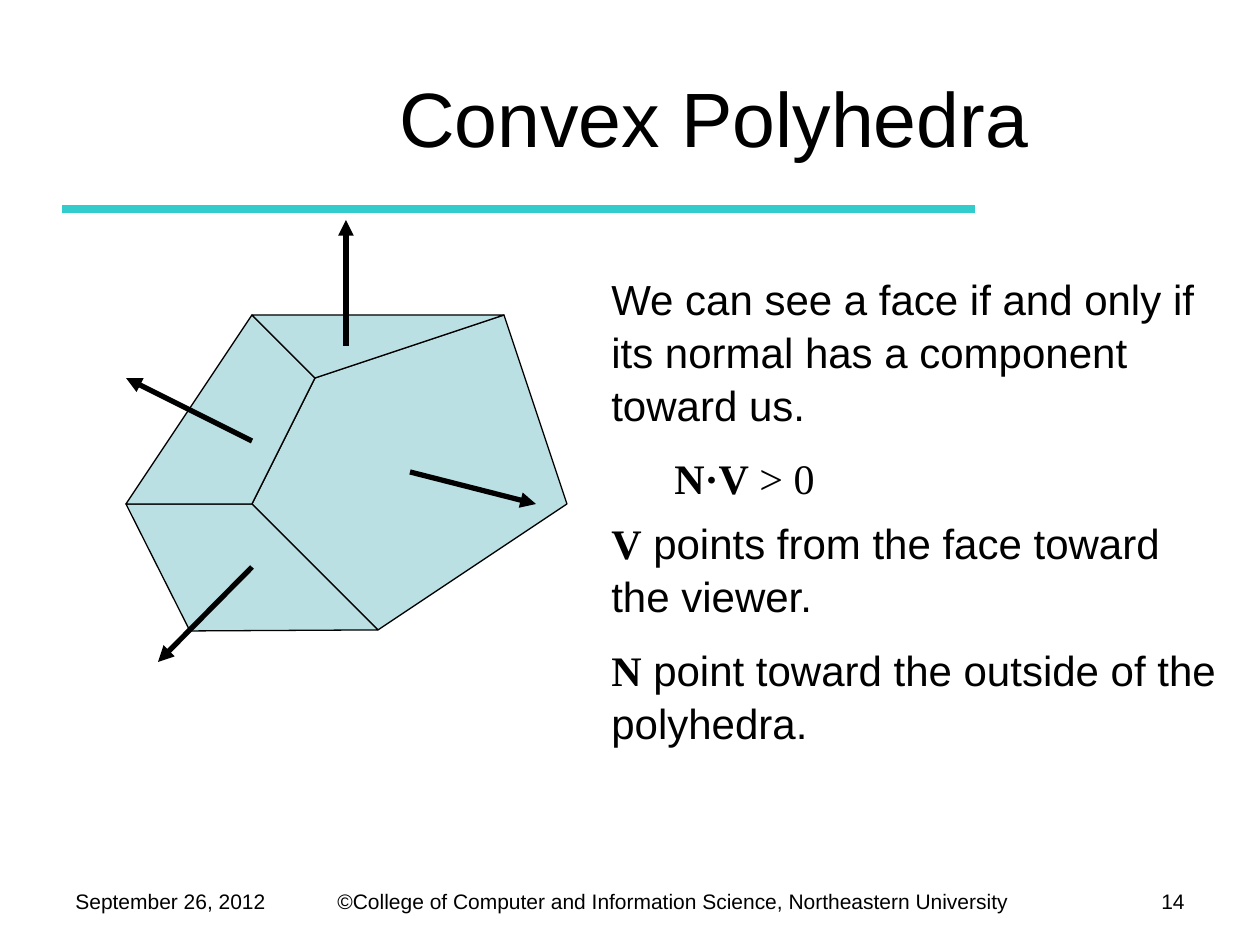
from lxml import etree
from pptx import Presentation
from pptx import util as u
from pptx.dml.color import RGBColor
from pptx.enum import shapes, text
from pptx.oxml import ns

PX = 914400 / 126
BLACK = RGBColor(0x00, 0x00, 0x00)
FACE = RGBColor(0xBB, 0xE0, 0xE3)
TEAL = RGBColor(0x33, 0xCC, 0xCC)
SANS, SERIF = "Arial", "Times New Roman"


def px(n):
    return u.Emu(round(n * PX))


def write(frame, paragraphs, size=24, align=text.PP_ALIGN.LEFT, anchor=text.MSO_ANCHOR.TOP,
          gap=0, spacing=1.0, indent=0):
    """Fill a text frame; each paragraph is a list of (words, font, bold) runs."""
    frame.word_wrap = True
    frame.vertical_anchor = anchor
    for i, runs in enumerate(paragraphs):
        paragraph = frame.paragraphs[0] if i == 0 else frame.add_paragraph()
        paragraph.alignment = align
        paragraph.line_spacing = spacing
        paragraph.space_before = u.Pt(gap if i else 0)
        if indent:
            paragraph._p.get_or_add_pPr().set("marL", str(px(indent)))
        for words, face, bold in runs:
            run = paragraph.add_run()
            run.text = words
            run.font.name, run.font.bold = face, bold
            run.font.size = u.Pt(size)
            run.font.color.rgb = BLACK


deck = Presentation()
deck.slide_width, deck.slide_height = px(1260), px(945)
slide = deck.slides.add_slide(deck.slide_layouts[5])

# Title
title = slide.shapes.title
title.left, title.top, title.width, title.height = px(231), px(38), px(966), px(157)
write(title.text_frame, [[("Convex Polyhedra", SANS, False)]], size=44,
      align=text.PP_ALIGN.CENTER, anchor=text.MSO_ANCHOR.MIDDLE)

# Rule under the title
rule = slide.shapes.add_connector(shapes.MSO_CONNECTOR.STRAIGHT, px(62), px(209), px(975), px(209))
rule.line.color.rgb = TEAL
rule.line.width = u.Pt(4.5)
etree.SubElement(rule._element.spPr, ns.qn("a:effectLst"))

# Polyhedron faces
polyhedron = slide.shapes.add_group_shape()
faces = [
    [(252, 504), (315, 378), (504, 315), (567, 504), (378, 630)],
    [(252, 504), (126, 504), (190, 631), (378, 630)],
    [(252, 504), (126, 504), (252, 315), (315, 378)],
    [(252, 315), (504, 315), (315, 378)],
]
for corners in faces:
    outline = polyhedron.shapes.build_freeform(*corners[0], scale=PX)
    outline.add_line_segments(corners[1:], close=True)
    face = outline.convert_to_shape()
    face.shadow.inherit = False
    face.fill.solid()
    face.fill.fore_color.rgb = FACE
    face.line.color.rgb = BLACK
    face.line.width = u.Pt(0.75)

# Face normals
normals = [(410, 472, 536, 504), (346, 346, 346, 220), (252, 441, 126, 378), (252, 567, 158, 662)]
for ends in normals:
    normal = polyhedron.shapes.add_connector(shapes.MSO_CONNECTOR.STRAIGHT, *map(px, ends))
    normal.line.color.rgb = BLACK
    normal.line.width = u.Pt(3)
    etree.SubElement(normal.line._get_or_add_ln(), ns.qn("a:tailEnd"), type="triangle")
    etree.SubElement(normal._element.spPr, ns.qn("a:effectLst"))

# Visibility rule, its formula and the vectors; then the footer
body = dict(gap=12, spacing=1.05)
footer = dict(size=12)
notes = [
    ((599, 265, 630, 164), body,
     [[("We can see a face if and only if its normal has a component toward us.", SANS, False)]]),
    ((599, 444, 630, 63), dict(body, indent=63),
     [[("N·V", SERIF, True), (" > 0", SERIF, False)]]),
    ((599, 509, 630, 239), body,
     [[("V", SERIF, True), (" points from the face toward the viewer.", SANS, False)],
      [("N", SERIF, True), (" point toward the outside of the polyhedra.", SANS, False)]]),
    ((63, 882, 221, 42), footer, [[("September 26, 2012", SANS, False)]]),
    ((325, 882, 713, 38), footer,
     [[("©College of Computer and Information Science, Northeastern University", SANS, False)]]),
    ((1092, 882, 105, 44), dict(footer, align=text.PP_ALIGN.RIGHT), [[("14", SANS, False)]]),
]
for place, style, paragraphs in notes:
    note = slide.shapes.add_textbox(*map(px, place))
    write(note.text_frame, paragraphs, **style)

deck.save("out.pptx")
